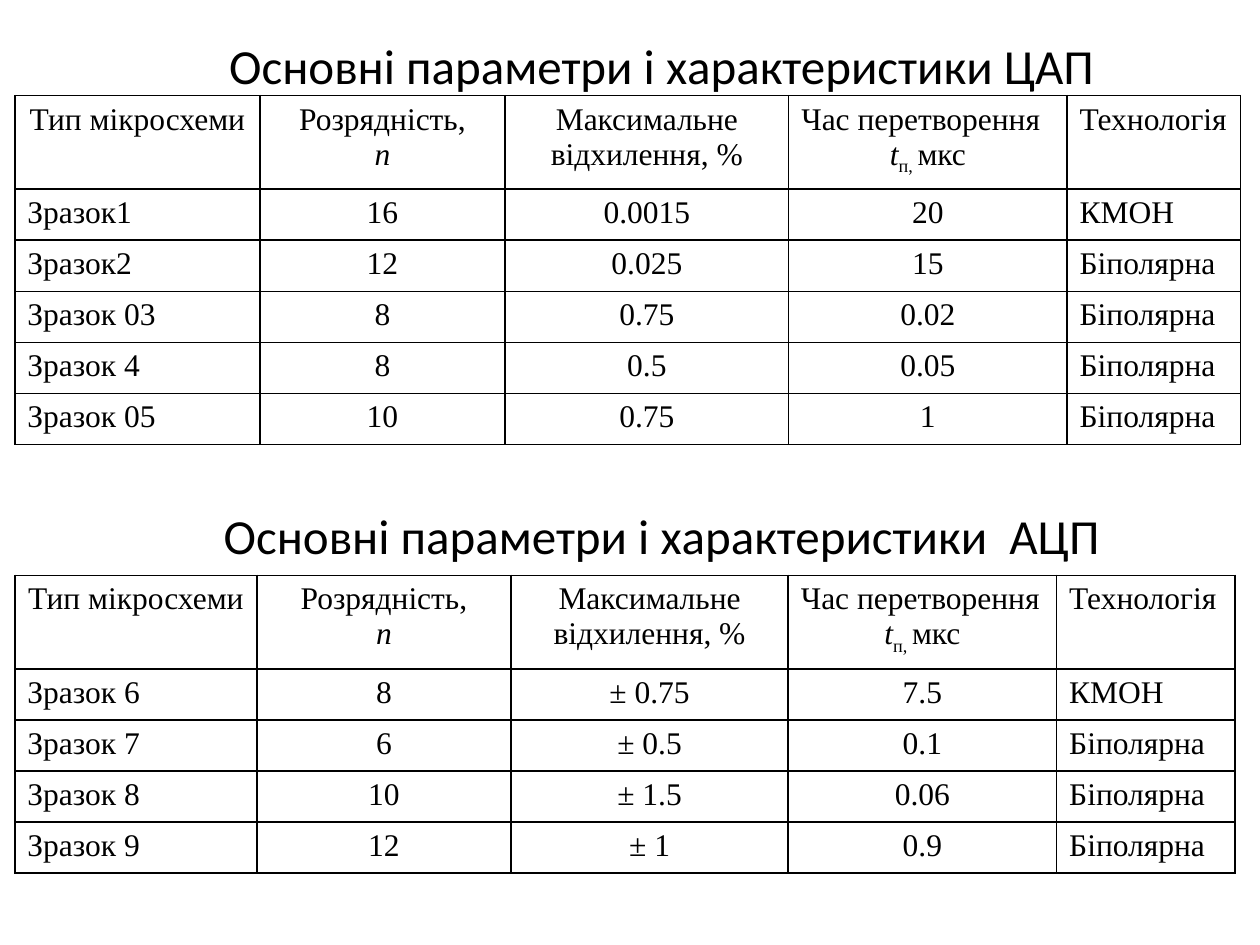
from dataclasses import dataclass

from lxml import etree
from pptx import Presentation
from pptx import util as u
from pptx.dml import color
from pptx.enum import text
from pptx.oxml import ns


@dataclass(frozen=True)
class Theme:
    """Colours, fonts and type sizes of the page."""
    ink: color.RGBColor = color.RGBColor(0, 0, 0)
    title_font: str = "Calibri"
    title_size: int = 28
    table_font: str = "Times New Roman"
    table_size: int = 18
    border: int = 1


THEME = Theme()
LEFT, CENTER = text.PP_ALIGN.LEFT, text.PP_ALIGN.CENTER
TITLES = ["Основні параметри і характеристики ЦАП",
          "Основні параметри і характеристики  АЦП"]
TITLE_GAP = 235
HEADER_HEIGHT, ROW_HEIGHT = 1.88, 1.03
COLUMN_ALIGNS = [LEFT, CENTER, CENTER, CENTER, LEFT]

PLAIN, ITALIC, SUBSCRIPT = "plain", "italic", "subscript"
HEADERS = [
    [(CENTER, [("Тип мікросхеми", PLAIN)])],
    [(CENTER, [("Розрядність,", PLAIN)]), (CENTER, [("n", ITALIC)])],
    [(CENTER, [("Максимальне відхилення, %", PLAIN)])],
    [(LEFT, [("Час перетворення", PLAIN)]),
     (CENTER, [("t", ITALIC), ("п, ", SUBSCRIPT), ("мкс", PLAIN)])],
    [(LEFT, [("Технологія", PLAIN)])],
]
DAC_ROWS = [
    ("Зразок1", "16", "0.0015", "20", "КМОН"),
    ("Зразок2", "12", "0.025", "15", "Біполярна"),
    ("Зразок 03", "8", "0.75", "0.02", "Біполярна"),
    ("Зразок 4", "8", "0.5", "0.05", "Біполярна"),
    ("Зразок 05", "10", "0.75", "1", "Біполярна"),
]
ADC_ROWS = [
    ("Зразок 6", "8", "± 0.75", "7.5", "КМОН"),
    ("Зразок 7", "6", "± 0.5", "0.1", "Біполярна"),
    ("Зразок 8", "10", "± 1.5", "0.06", "Біполярна"),
    ("Зразок 9", "12", "± 1", "0.9", "Біполярна"),
]


def set_font(para, name, size):
    """Give a paragraph its font, size and colour."""
    para.font.name = name
    para.font.size = u.Pt(size)
    para.font.color.rgb = THEME.ink


def add_titles(page):
    """Add both table titles in one text box."""
    box = page.shapes.add_textbox(0, u.Cm(0.51), u.Cm(25.4), u.Cm(15.82))
    frame = box.text_frame
    frame.word_wrap = True
    frame.margin_top = u.Cm(0.21)
    for index, title in enumerate(TITLES):
        para = frame.add_paragraph() if index else frame.paragraphs[0]
        para.text = title
        para.alignment = CENTER
        para.space_before = u.Pt(TITLE_GAP * index)
        para._p.get_or_add_pPr().set("indent", str(u.Cm(1.27)))
        set_font(para, THEME.title_font, THEME.title_size)


def draw_borders(cell):
    """Draw a thin line on each side of a cell."""
    properties = cell._tc.get_or_add_tcPr()
    for index, side in enumerate(("lnL", "lnR", "lnT", "lnB")):
        line = etree.Element(ns.qn(f"a:{side}"), w=str(u.Pt(THEME.border)))
        fill = etree.SubElement(line, ns.qn("a:solidFill"))
        etree.SubElement(fill, ns.qn("a:srgbClr"), val=str(THEME.ink))
        properties.insert(index, line)


def fill_cell(cell, paragraphs):
    """Write aligned paragraphs of styled spans into a cell."""
    cell.fill.background()
    draw_borders(cell)
    frame = cell.text_frame
    for index, (alignment, spans) in enumerate(paragraphs):
        para = frame.add_paragraph() if index else frame.paragraphs[0]
        para.alignment = alignment
        set_font(para, THEME.table_font, THEME.table_size)
        for words, style in spans:
            span = para.add_run()
            span.text = words
            if style == ITALIC:
                span.font.italic = True
            elif style == SUBSCRIPT:
                span._r.get_or_add_rPr().set("baseline", "-25000")


def add_parameter_table(page, top, widths, rows):
    """Add a bordered table of converter parameters."""
    height = HEADER_HEIGHT + ROW_HEIGHT * len(rows)
    table = page.shapes.add_table(
        len(rows) + 1, len(widths), u.Cm(0.3), u.Cm(top),
        u.Cm(sum(widths)), u.Cm(height)).table
    table.first_row = table.horz_banding = False
    for column, width in zip(table.columns, widths):
        column.width = u.Cm(width)
    for index, row in enumerate(table.rows):
        row.height = u.Cm(ROW_HEIGHT if index else HEADER_HEIGHT)
    body = [[[(alignment, [(value, PLAIN)])]
             for alignment, value in zip(COLUMN_ALIGNS, row)] for row in rows]
    for row, contents in zip(table.rows, [HEADERS] + body):
        for cell, paragraphs in zip(row.cells, contents):
            fill_cell(cell, paragraphs)


def main():
    """Build the page and save the deck."""
    deck = Presentation()
    deck.slide_width, deck.slide_height = u.Cm(25.4), u.Cm(19.05)
    page = deck.slides.add_slide(deck.slide_layouts[6])
    add_titles(page)
    add_parameter_table(page, 1.93, [4.94, 4.94, 5.72, 5.61, 3.5], DAC_ROWS)
    add_parameter_table(page, 11.6, [4.88, 5.12, 5.59, 5.41, 3.6], ADC_ROWS)
    deck.save("out.pptx")


if __name__ == "__main__":
    main()
